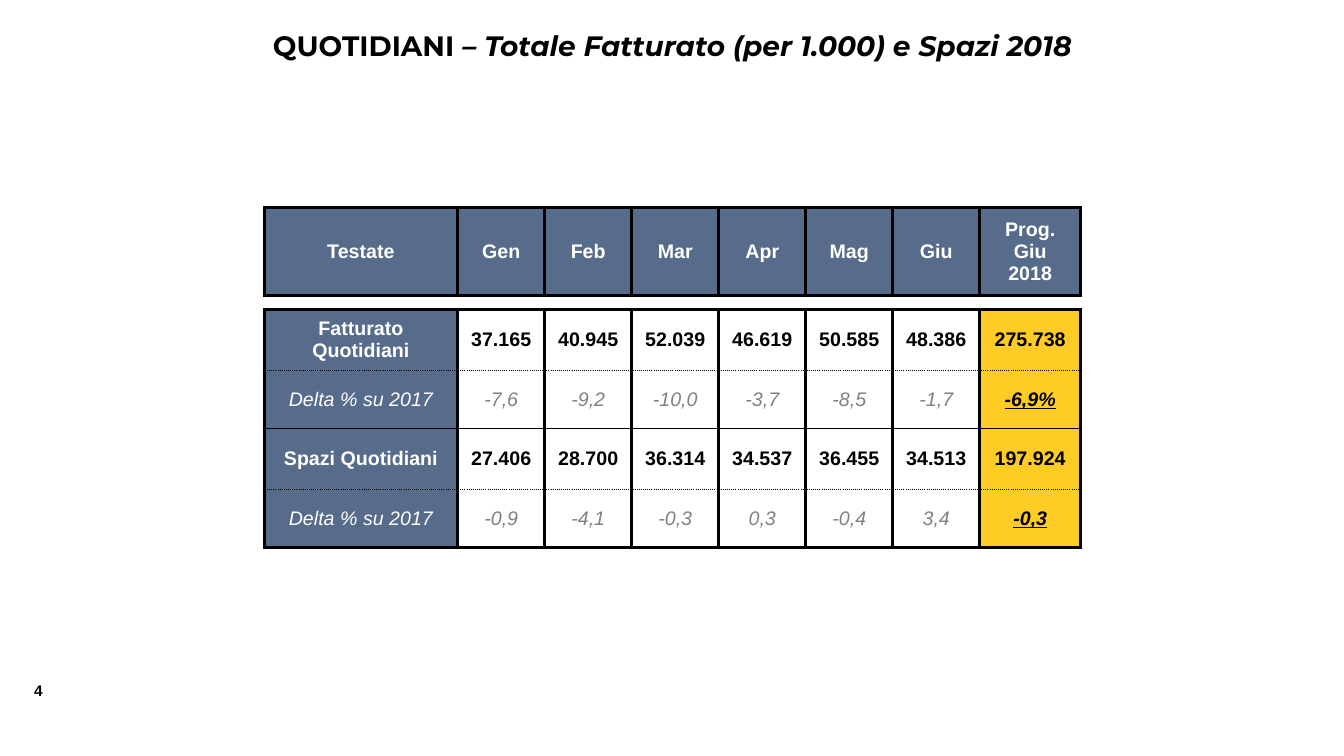
"""Build the slide on newspaper revenue and space for 2018."""
from lxml.etree import SubElement
from pptx import Presentation
from pptx.dml.color import RGBColor
from pptx.enum.text import MSO_ANCHOR, MSO_AUTO_SIZE, PP_ALIGN
from pptx.oxml.ns import qn
from pptx.util import Inches, Pt

TITLE = [("QUOTIDIANI ", {}), ("– Totale Fatturato (per 1.000) e Spazi 2018", {"italic": True})]
PAGE = "4"
HEAD = ["Testate", "Gen", "Feb", "Mar", "Apr", "Mag", "Giu", "Prog.\nGiu\n2018"]
ROWS = [
    HEAD,
    [""] * len(HEAD),
    ["Fatturato Quotidiani", "37.165", "40.945", "52.039", "46.619", "50.585", "48.386", "275.738"],
    ["Delta % su 2017", "-7,6", "-9,2", "-10,0", "-3,7", "-8,5", "-1,7", "-6,9%"],
    ["Spazi Quotidiani", "27.406", "28.700", "36.314", "34.537", "36.455", "34.513", "197.924"],
    ["Delta % su 2017", "-0,9", "-4,1", "-0,3", "0,3", "-0,4", "3,4", "-0,3"],
]
KINDS = ["head", "gap", "total", "delta", "total", "delta"]
HEIGHTS = {"head": 0.87, "gap": 0.14, "total": 0.61, "delta": 0.57}
EDGES = ["thick", "thick", "thick", "dots", "thin", "dots", "thick"]
LINES = {"thick": (2.25, "solid"), "thin": (1, "solid"), "dots": (1, "sysDot"), "none": (0, None)}
LEFT, TOP, WIDTH, FIRST, FINAL = 2.62, 2.06, 8.1, 1.92, 1
THEME = {
    "ink": "000000", "white": "FFFFFF", "gray": "808080", "blue": "576B8A", "gold": "FFCB25",
    "body": "Arial", "display": "Montserrat",
    "title": 20, "cell": 14, "page": 11, "gap": 1,
}


def style(font, size, color="ink", name="body", **extra):
    """Apply theme values and any extra format to a font."""
    font.color.rgb = RGBColor.from_string(THEME[color])
    values = {"name": THEME[name], "size": Pt(THEME[size]), "bold": True, **extra}
    for key, value in values.items():
        setattr(font, key, value)


def border(cell, sides):
    """Draw the four sides of a cell, in left, right, top, bottom order."""
    props = cell._tc.get_or_add_tcPr()
    for spot, (side, kind) in enumerate(zip("LRTB", sides)):
        width, dash = LINES[kind]
        line = SubElement(props, qn(f"a:ln{side}"), w=str(int(Pt(width))))
        if dash:
            fill = SubElement(line, qn("a:solidFill"))
            SubElement(fill, qn("a:srgbClr"), val=THEME["ink"])
            SubElement(line, qn("a:prstDash"), val=dash)
        else:
            SubElement(line, qn("a:noFill"))
        props.insert(spot, line)


def look(kind, col):
    """Return the fill and the font format of a cell."""
    last = col == len(HEAD) - 1
    delta = kind == "delta"
    if kind == "gap":
        return None, {"size": "gap"}
    if kind == "head" or col == 0:
        return "blue", {"size": "cell", "color": "white", "bold": not delta, "italic": delta}
    if last:
        return "gold", {"size": "cell", "italic": delta, "underline": delta}
    color = "gray" if delta else "ink"
    return None, {"size": "cell", "color": color, "bold": not delta, "italic": delta}


def paint(cell, row, col):
    """Fill one table cell with its text, colour and borders."""
    kind = KINDS[row]
    fill, form = look(kind, col)
    roomy = kind == "head" or (col == 0 and kind != "gap")
    across, down = (0.1, 0.05) if roomy else (0, 0)
    values = {
        "text": ROWS[row][col], "vertical_anchor": MSO_ANCHOR.MIDDLE,
        "margin_left": Inches(across), "margin_right": Inches(across),
        "margin_top": Inches(down), "margin_bottom": Inches(down),
    }
    for key, value in values.items():
        setattr(cell, key, value)
    for para in cell.text_frame.paragraphs:
        para.alignment = PP_ALIGN.CENTER
        style(para.font, **form)
        for run in para.runs:
            style(run.font, **form)
    if fill:
        cell.fill.solid()
        cell.fill.fore_color.rgb = RGBColor.from_string(THEME[fill])
    else:
        cell.fill.background()
    side = "none" if kind == "gap" else "thick"
    border(cell, [side, side, EDGES[row], EDGES[row + 1]])


def label(slide, box, parts, wrap, align, **form):
    """Add a text box made of formatted runs."""
    frame = slide.shapes.add_textbox(*map(Inches, box)).text_frame
    frame.word_wrap = wrap
    frame.auto_size = MSO_AUTO_SIZE.SHAPE_TO_FIT_TEXT
    para = frame.paragraphs[0]
    para.alignment = align
    for text, extra in parts:
        run = para.add_run()
        run.text = text
        style(run.font, **form, **extra)


def grid(slide):
    """Add the table of monthly values."""
    size = len(ROWS), len(HEAD)
    tall = sum(HEIGHTS[kind] for kind in KINDS)
    table = slide.shapes.add_table(*size, *map(Inches, (LEFT, TOP, WIDTH, tall))).table
    table.first_row = table.horz_banding = False
    month = (WIDTH - FIRST - FINAL) / (len(HEAD) - 2)
    for col, wide in enumerate([FIRST] + [month] * (len(HEAD) - 2) + [FINAL]):
        table.columns[col].width = Inches(wide)
    for row, kind in enumerate(KINDS):
        table.rows[row].height = Inches(HEIGHTS[kind])
        for col in range(len(HEAD)):
            paint(table.cell(row, col), row, col)


def main():
    """Build and save the deck."""
    deck = Presentation()
    deck.slide_width, deck.slide_height = Inches(13.33), Inches(7.5)
    slide = deck.slides.add_slide(deck.slide_layouts[6])
    label(slide, (0.24, 6.71, 0.42, 0.29), [(PAGE, {})], False, PP_ALIGN.LEFT, size="page")
    label(slide, (1.67, 0.23, 10, 0.44), TITLE, True, PP_ALIGN.CENTER, size="title", name="display")
    grid(slide)
    deck.save("out.pptx")


if __name__ == "__main__":
    main()
